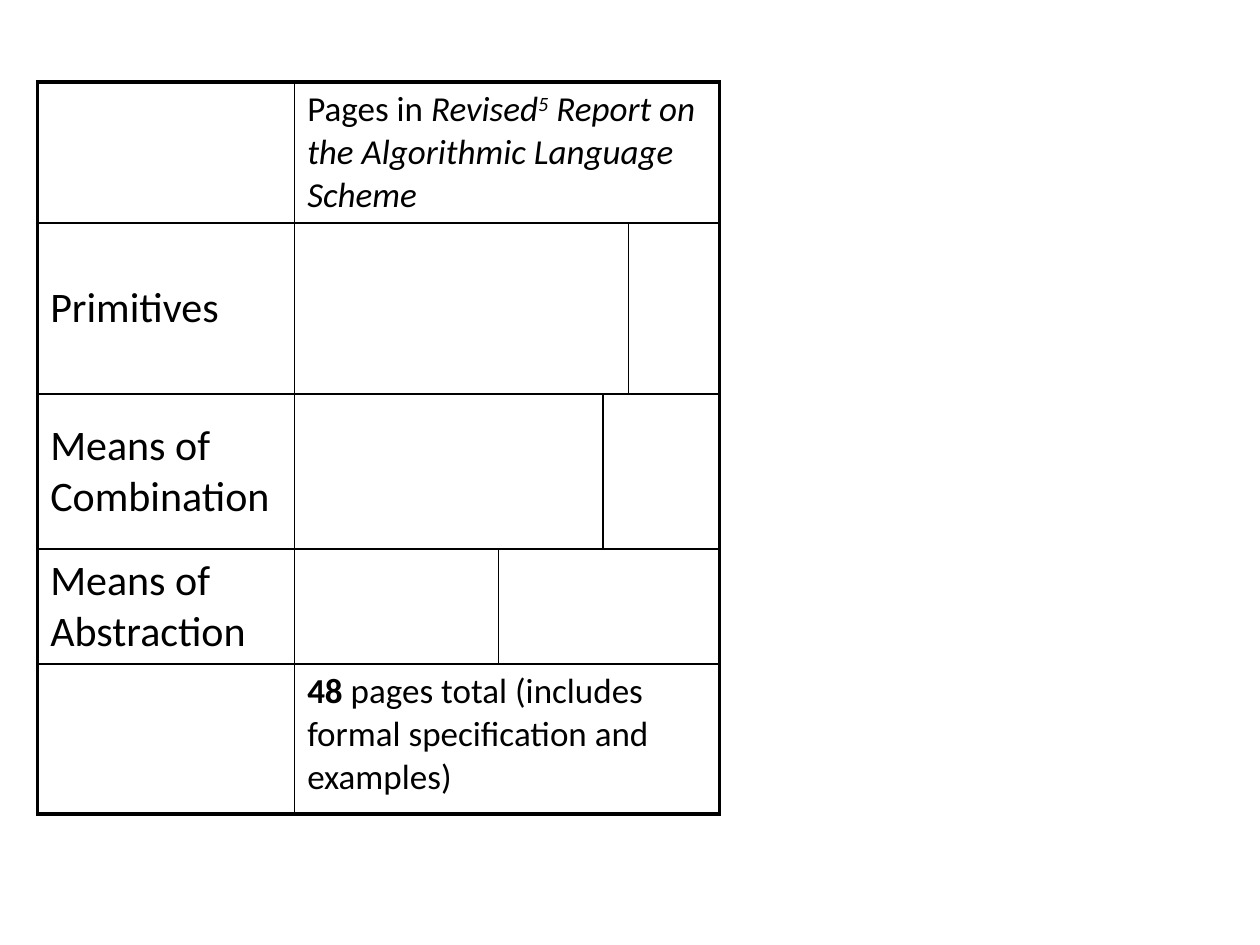
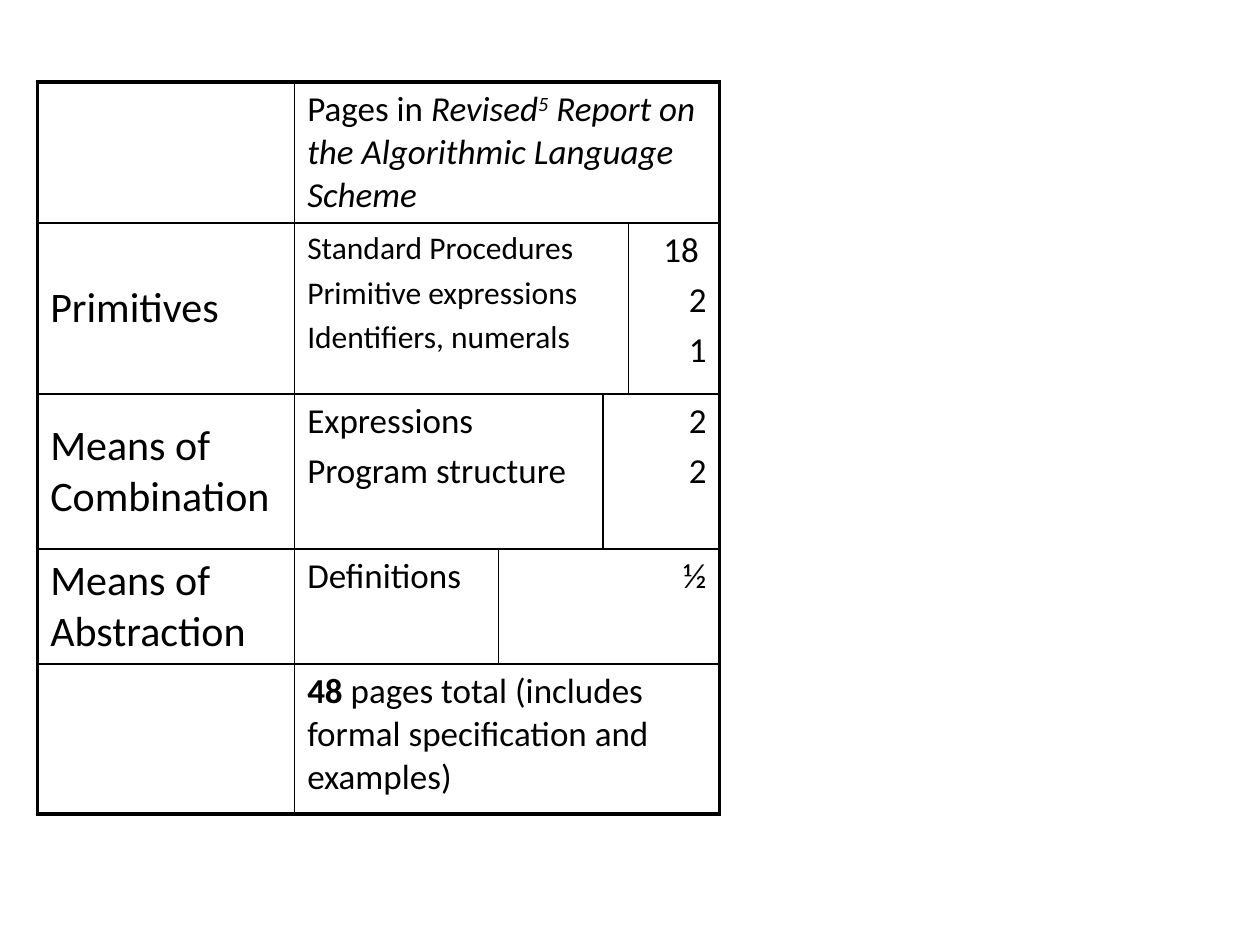
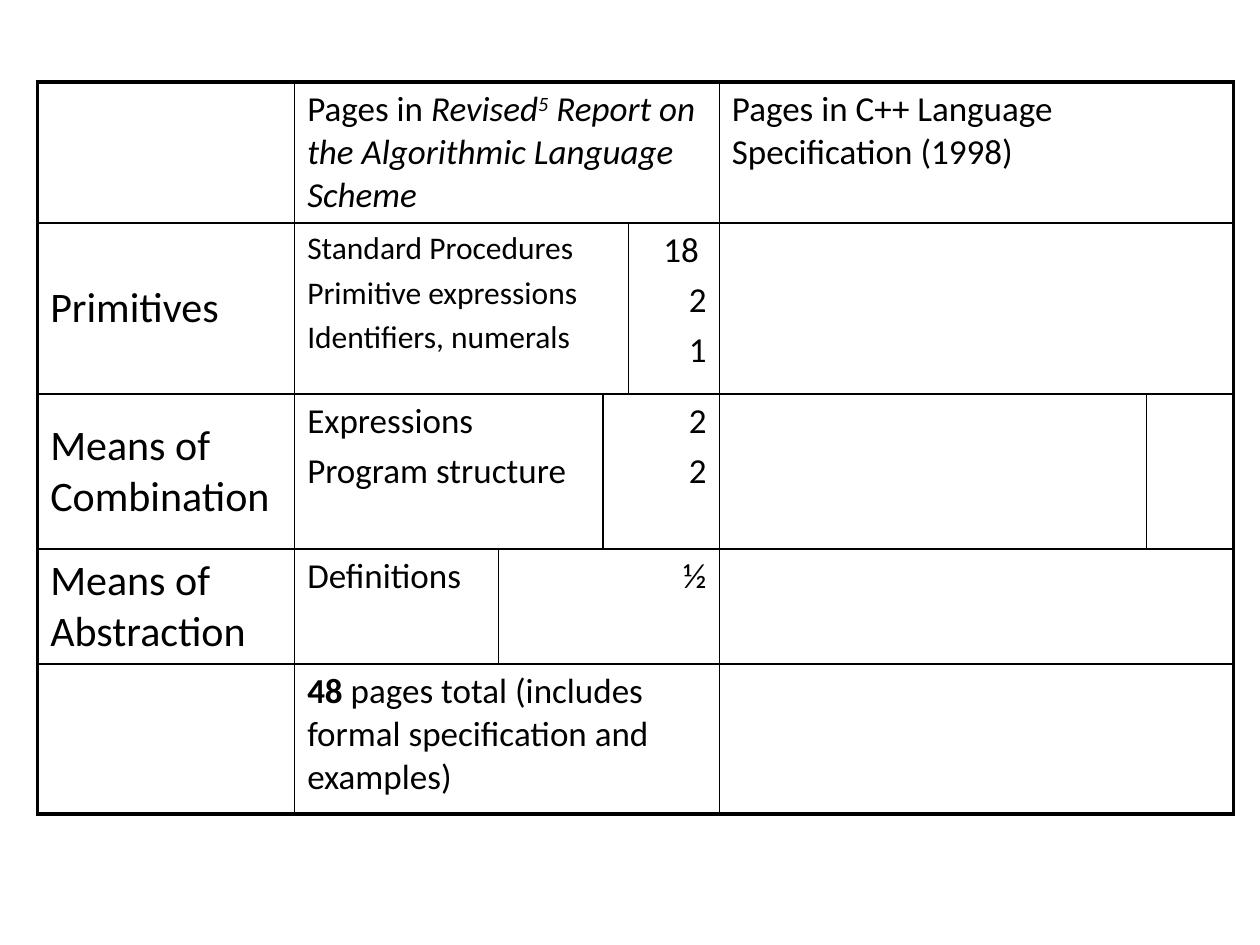
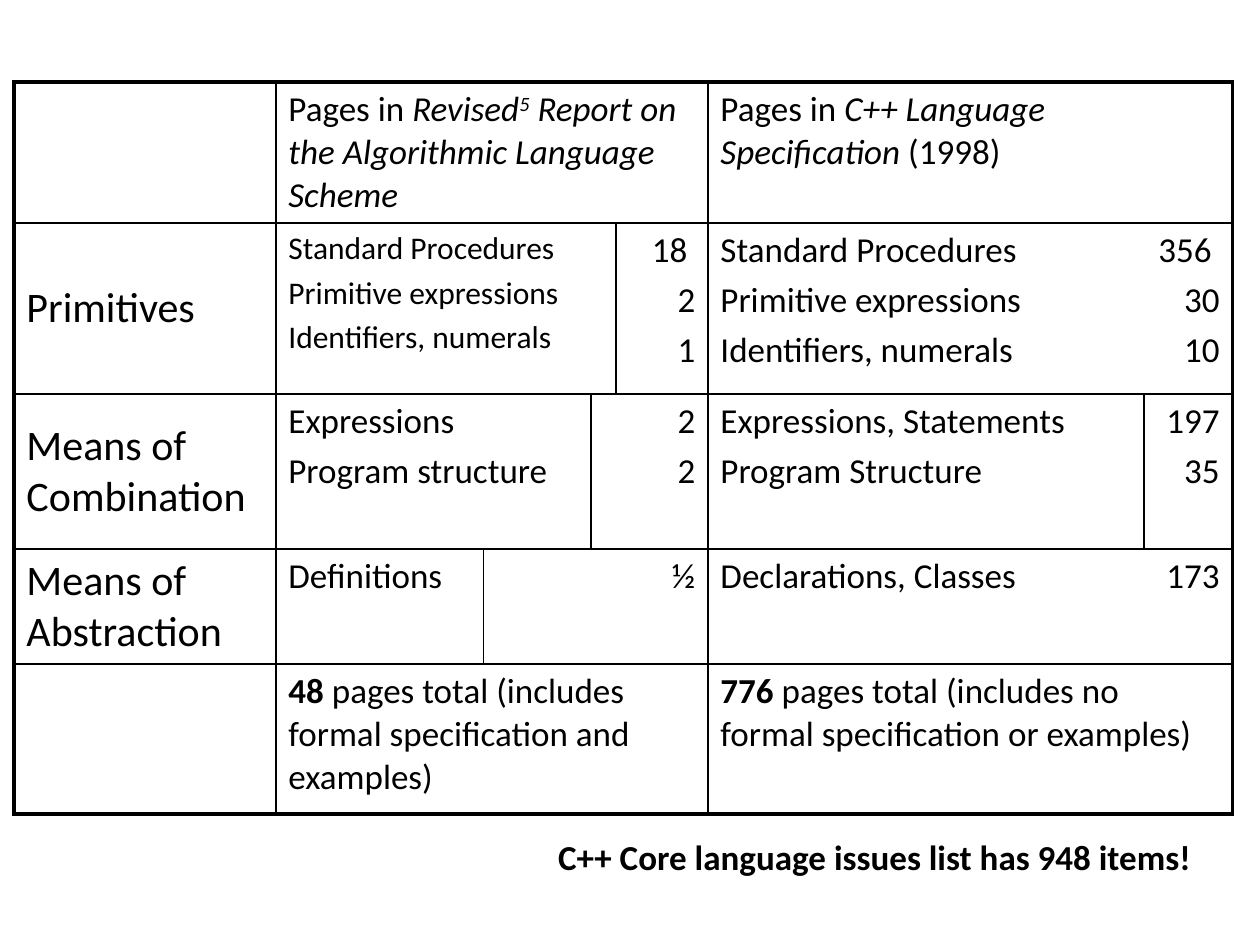
from pptx import Presentation
from pptx.dml.color import RGBColor as Rgb
from pptx.enum.text import MSO_ANCHOR as Anchor, MSO_AUTO_SIZE as Auto, PP_ALIGN as Align
from pptx.oxml import parse_xml
from pptx.oxml.ns import nsdecls
from pptx.util import Cm, Pt

HUES = {"ink": "000000"}
FONT = "Calibri"
THIN, THICK = 1, 2.25
BARE = "{2D5ABB26-0587-4C30-8999-92F81FD0307C}"  # table style without grid

TOP = 1.65
ROWS = [2.69, 3.45, 3.12, 1.98, 3.02]
COLS = [5.18, 4.11, 2.11, 0.51, 1.83, 7.19, 1.42, 1.75]
WIDE = [5.28, 4.19, 2.16, 0.51, 1.85, 7.34, 1.45, 1.78]
LABELS = ["", "Primitives", "Means of Combination", "Means of Abstraction", ""]

# A run is (text, marks): i italic, b bold, s superscript.
SCHEME = {
    "head": [("Pages in ", ""), ("Revised", "i"), ("5", "is"),
             (" Report on the Algorithmic Language Scheme", "i")],
    "total": [("48", "b"), (" pages total (includes formal specification and examples)", "")],
    "cols": 4,
    "splits": [3, 2, 1],
    "sizes": [18, 20, 20],
    "body": [
        (["Standard Procedures", "Primitive expressions", "Identifiers, numerals"],
         ["18 ", "2", "1"]),
        (["Expressions", "Program structure"], ["2", "2"]),
        (["Definitions"], ["½"]),
    ],
}
CPP = {
    "head": [("Pages in ", ""), ("C++ Language Specification", "i"), (" (1998)", "")],
    "total": [("776", "b"), (" pages total (includes no formal specification or examples)", "")],
    "cols": 3,
    "splits": [1, 2, 1],
    "sizes": [20, 20, 20],
    "body": [
        (["Standard Procedures", "Primitive expressions", "Identifiers, numerals"],
         ["356 ", "30", "10"]),
        (["Expressions, Statements", "Program Structure"], ["197", "35"]),
        (["Declarations, Classes"], ["173"]),
    ],
}
# Stages in which the figures are not shown yet
EMPTY = [([], [])] * 3
SCHEME_BARE = {**SCHEME, "body": EMPTY}
CPP_BARE = {**CPP, "head": "Pages in C++ Language Specification (1998)",
            "body": EMPTY, "total": ""}


def write(frame, paras, size=20, align=Align.LEFT, gap=0.0, bold=False):
    """Fill a text frame; gap is the space before, as a share of the size."""
    for n, runs in enumerate(paras):
        para = frame.paragraphs[0] if n == 0 else frame.add_paragraph()
        para.alignment = align
        para.space_before = Pt(size * gap)
        for text, marks in [(runs, "")] if isinstance(runs, str) else runs:
            run = para.add_run()
            run.text = text
            font = run.font
            font.name, font.size = FONT, Pt(size)
            font.bold, font.italic = bold or "b" in marks, "i" in marks
            font.color.rgb = Rgb.from_string(HUES["ink"])
            if "s" in marks:
                font._element.set("baseline", "30000")


def edge(cell, **sides):
    """Draw cell borders; sides maps L, R, T, B to a width in points."""
    props = cell._tc.get_or_add_tcPr()
    for n, side in enumerate(s for s in "LRTB" if sides.get(s)):
        props.insert(n, parse_xml(
            f'<a:ln{side} {nsdecls("a")} w="{Pt(sides[side])}"><a:solidFill>'
            f'<a:srgbClr val="{HUES["ink"]}"/></a:solidFill></a:ln{side}>'))


def part(table, row, start, count, bounds, paras, mid=False, **style):
    """Make one (merged) cell, ruled only where a column group begins or ends."""
    end = start + count
    last = len(table.columns)
    left = 0 if start not in bounds else THICK if start == 0 else THIN
    right = 0 if end not in bounds else THICK if end == last else THIN
    for col in range(start, end):
        cell = table.cell(row, col)
        cell.fill.background()
        edge(cell, L=left if col == start else 0,
             R=right if col in (start, end - 1) else 0,
             T=THICK if row == 0 else THIN,
             B=THICK if row == len(ROWS) - 1 else THIN)
    cell = table.cell(row, start)
    if count > 1:
        cell.merge(table.cell(row, end - 1))
    cell.vertical_anchor = Anchor.MIDDLE if mid else Anchor.TOP
    if any(paras):
        write(cell.text_frame, paras, **style)


def grid(slide, left, widths, groups):
    """Build the comparison table with one column group per language."""
    bounds = [0, 1]
    for group in groups:
        bounds.append(bounds[-1] + group["cols"])
    widths = widths[:bounds[-1]]
    table = slide.shapes.add_table(len(ROWS), len(widths), Cm(left), Cm(TOP),
                                   Cm(sum(widths)), Cm(sum(ROWS))).table
    table.first_row = table.horz_banding = False
    table._tbl.tblPr[0].text = BARE
    for col, width in zip(table.columns, widths):
        col.width = Cm(width)
    for row, height in zip(table.rows, ROWS):
        row.height = Cm(height)

    for row, label in enumerate(LABELS):
        part(table, row, 0, 1, bounds, [label], mid=bool(label), size=24, gap=0.2)
    for start, group in zip(bounds[1:], groups):
        count = group["cols"]
        part(table, 0, start, count, bounds, [group["head"]])
        lines = zip(group["splits"], group["sizes"], group["body"])
        for row, (split, size, (names, pages)) in enumerate(lines, 1):
            part(table, row, start, split, bounds, names, size=size, gap=0.2)
            part(table, row, start + split, count - split, bounds, pages,
                 align=Align.RIGHT, gap=0.2)
        part(table, len(ROWS) - 1, start, count, bounds, [group["total"]])


def note(slide, text):
    """Add the bold remark below the table."""
    box = slide.shapes.add_textbox(Cm(11), Cm(16.71), Cm(13.54), Cm(1.09))
    frame = box.text_frame
    frame.word_wrap = True
    frame.auto_size = Auto.SHAPE_TO_FIT_TEXT
    write(frame, [text], gap=0.5, bold=True)


def main():
    deck = Presentation()
    deck.slide_width, deck.slide_height = Cm(25.4), Cm(19.05)
    stages = [
        (0.76, COLS, [SCHEME_BARE]),
        (0.76, COLS, [SCHEME]),
        (0.76, COLS, [SCHEME, CPP_BARE]),
        (0.28, WIDE, [SCHEME, CPP]),
    ]
    for left, widths, groups in stages:
        slide = deck.slides.add_slide(deck.slide_layouts[6])
        grid(slide, left, widths, groups)
    note(slide, "C++ Core language issues list has 948 items!")
    deck.save("out.pptx")


if __name__ == "__main__":
    main()
